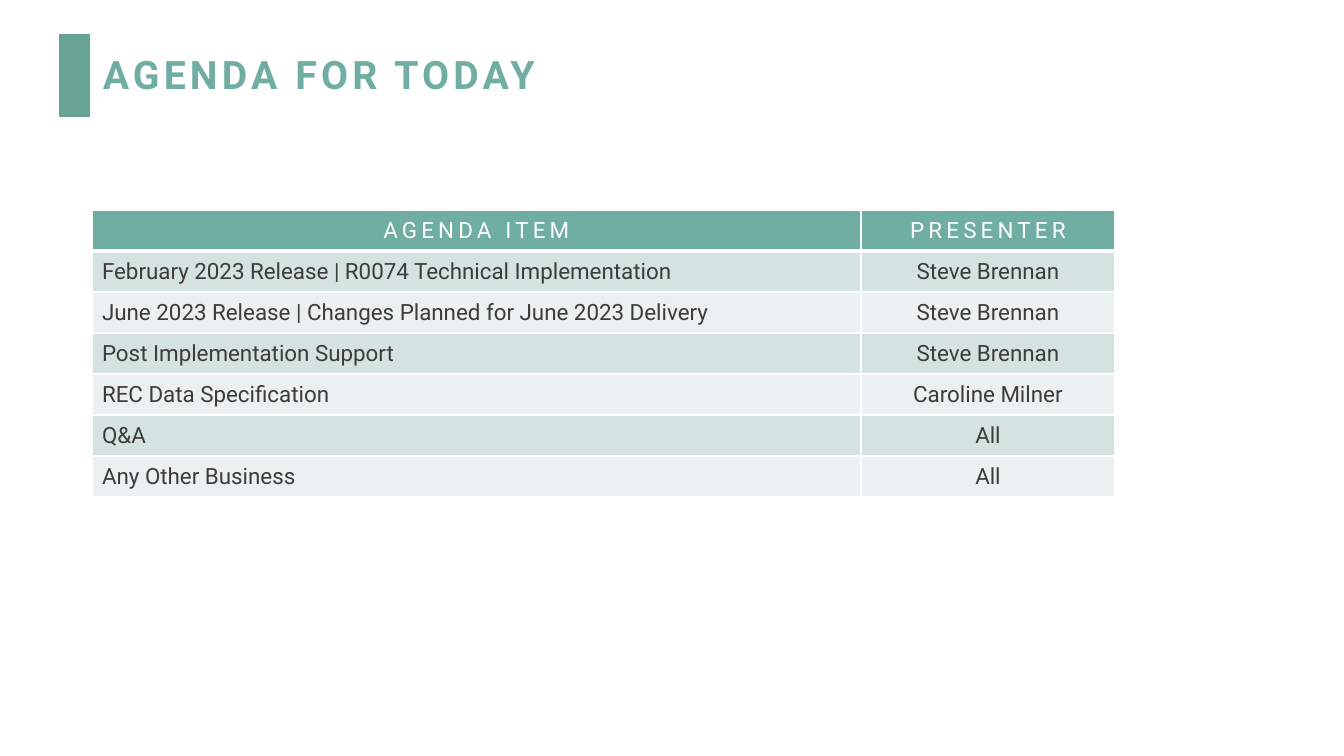
from dataclasses import dataclass

from lxml.etree import SubElement
from pptx import Presentation
from pptx.dml.color import RGBColor
from pptx.enum.shapes import MSO_SHAPE as Shape
from pptx.enum.text import MSO_ANCHOR as Anchor, PP_ALIGN as Align
from pptx.oxml.ns import qn
from pptx.util import Pt

PX = 12192000 / 1344
FONT = "Roboto"
COLORS = {
    "bar": "68A495",
    "teal": "70ADA3",
    "dark": "D5E3E0",
    "light": "EBF1F0",
    "ink": "3C3C3B",
    "white": "FFFFFF",
}
WIDTHS = (769, 254)
ROW = 41


@dataclass
class Item:
    topic: str
    host: str


@dataclass
class Style:
    size: int
    color: str
    bold: bool = False
    track: int = 0


ITEMS = [
    Item("February 2023 Release | R0074 Technical Implementation", "Steve Brennan"),
    Item("June 2023 Release | Changes Planned for June 2023 Delivery", "Steve Brennan"),
    Item("Post Implementation Support", "Steve Brennan"),
    Item("REC Data Specification", "Caroline Milner"),
    Item("Q&A", "All"),
    Item("Any Other Business", "All"),
]
TITLE = Style(28, "teal", True, 3)
HEAD = Style(16, "white", track=3)
BODY = Style(16, "ink")


def px(count: int) -> int:
    return round(count * PX)


def box(*sides: int) -> list[int]:
    return [px(side) for side in sides]


def rgb(name: str) -> RGBColor:
    return RGBColor.from_string(COLORS[name])


def write(frame, text: str, style: Style, align: Align = Align.LEFT) -> None:
    frame.text = text
    para = frame.paragraphs[0]
    para.alignment = align
    run = para.runs[0]
    run.font.name = FONT
    run.font.size = Pt(style.size)
    run.font.bold = style.bold
    run.font.color.rgb = rgb(style.color)
    run.font._element.set("spc", str(style.track * 100))


def edge(cell, head: bool) -> None:
    """Give the cell white borders, thicker below the header row."""
    props = cell._tc.get_or_add_tcPr()
    for side in "LRTB":
        width = Pt(3 if head and side == "B" else 1)
        line = SubElement(props, qn(f"a:ln{side}"), w=str(width))
        fill = SubElement(line, qn("a:solidFill"))
        SubElement(fill, qn("a:srgbClr"), val=COLORS["white"])


def add_title(slide) -> None:
    bar = slide.shapes.add_shape(Shape.RECTANGLE, *box(59, 34, 31, 83))
    bar.shadow.inherit = False
    bar.fill.solid()
    bar.fill.fore_color.rgb = rgb("bar")
    bar.line.fill.background()

    frame = slide.shapes.add_textbox(*box(93, 40, 1023, 73)).text_frame
    frame.word_wrap = True
    frame.vertical_anchor = Anchor.MIDDLE
    write(frame, "AGENDA FOR TODAY", TITLE)
    frame.paragraphs[0].line_spacing = 0.9


def add_agenda(slide, items: list[Item]) -> None:
    rows = [Item("AGENDA ITEM", "PRESENTER"), *items]
    area = box(92, 210, sum(WIDTHS), ROW * len(rows))
    table = slide.shapes.add_table(len(rows), len(WIDTHS), *area).table
    table.first_row = True
    table.horz_banding = False
    for col, width in zip(table.columns, WIDTHS):
        col.width = px(width)
    for r, item in enumerate(rows):
        head = r == 0
        table.rows[r].height = px(ROW)
        shade = "teal" if head else "dark" if r % 2 else "light"
        for c, text in enumerate((item.topic, item.host)):
            cell = table.cell(r, c)
            cell.vertical_anchor = Anchor.MIDDLE
            edge(cell, head)
            cell.fill.solid()
            cell.fill.fore_color.rgb = rgb(shade)
            align = Align.CENTER if head or c else Align.LEFT
            write(cell.text_frame, text, HEAD if head else BODY, align)


def main() -> None:
    deck = Presentation()
    deck.slide_width, deck.slide_height = box(1344, 756)
    slide = deck.slides.add_slide(deck.slide_layouts[6])
    add_title(slide)
    add_agenda(slide, ITEMS)
    deck.save("out.pptx")


if __name__ == "__main__":
    main()
